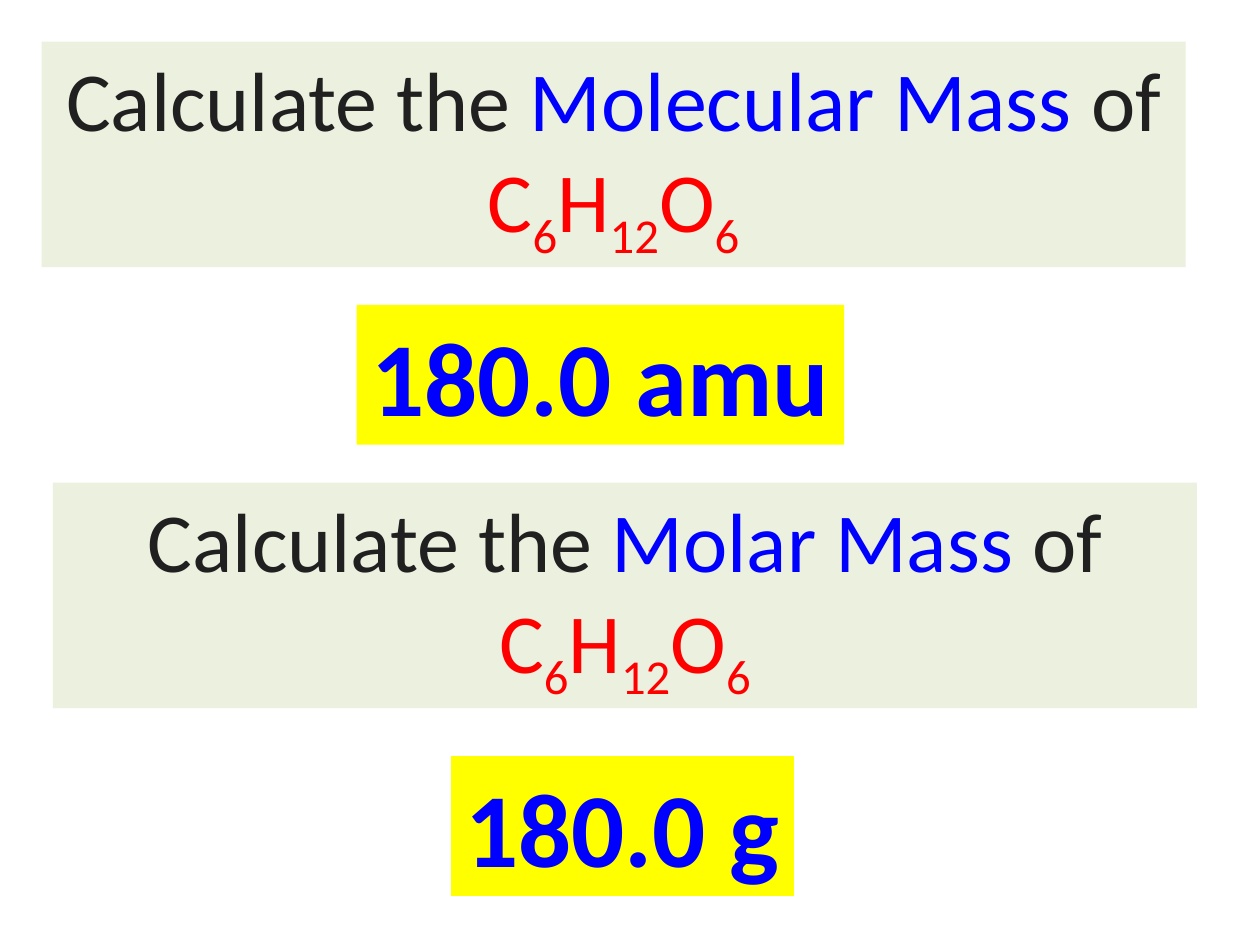
from pptx import Presentation
from pptx.dml.color import RGBColor
from pptx.enum.shapes import MSO_SHAPE
from pptx.enum.text import MSO_ANCHOR, MSO_AUTO_SIZE, PP_ALIGN
from pptx.util import Inches, Pt

RECTANGLE = MSO_SHAPE.RECTANGLE
TOP = MSO_ANCHOR.TOP
CENTER = PP_ALIGN.CENTER
FIT_SHAPE = MSO_AUTO_SIZE.SHAPE_TO_FIT_TEXT

FONT = "Calibri"
INK, BLUE, RED = "202020", "0000FF", "FF0000"
PALE_GREEN, YELLOW = "EBF1DE", "FFFF00"
GLUCOSE = (("C", "6"), ("H", "12"), ("O", "6"))


def color(hex_string):
    return RGBColor.from_string(hex_string)


def add_panel(slide, box, fill):
    """Add a plain filled rectangle; box is left, top, width, height in inches."""
    panel = slide.shapes.add_shape(RECTANGLE, *map(Inches, box))
    panel.shadow.inherit = False
    panel.fill.solid()
    panel.fill.fore_color.rgb = color(fill)
    panel.line.fill.background()
    frame = panel.text_frame
    frame.vertical_anchor = TOP
    frame.paragraphs[0].alignment = CENTER
    return frame


def add_run(paragraph, text, size, ink, bold=False, subscript=False):
    run = paragraph.add_run()
    run.text = text
    run.font.name = FONT
    run.font.size = Pt(size)
    run.font.bold = bold
    run.font.color.rgb = color(ink)
    if subscript:
        run.font._element.set("baseline", "-25000")


def add_question(slide, box, quantity):
    frame = add_panel(slide, box, PALE_GREEN)
    frame.word_wrap = True
    question = frame.paragraphs[0]
    for text, ink in (("Calculate the ", INK), (quantity + " ", BLUE), ("of ", INK)):
        add_run(question, text, 48, ink)
    for element, count in GLUCOSE:
        add_run(question, element, 48, RED)
        add_run(question, count, 48, RED, subscript=True)


def add_answer(slide, box, value):
    frame = add_panel(slide, box, YELLOW)
    frame.word_wrap = False
    frame.auto_size = FIT_SHAPE
    add_run(frame.paragraphs[0], value, 60, BLUE, bold=True)


def main():
    prs = Presentation()
    prs.slide_width, prs.slide_height = Inches(10), Inches(7.5)
    slide = prs.slides.add_slide(prs.slide_layouts[6])
    add_question(slide, (0.33, 0.33, 9.08, 1.79), "Molecular Mass")
    add_answer(slide, (2.83, 2.42, 3.87, 1.11), "180.0 amu")
    add_question(slide, (0.42, 3.83, 9.08, 1.79), "Molar Mass")
    add_answer(slide, (3.58, 6, 2.72, 1.11), "180.0 g")
    prs.save("out.pptx")


if __name__ == "__main__":
    main()
